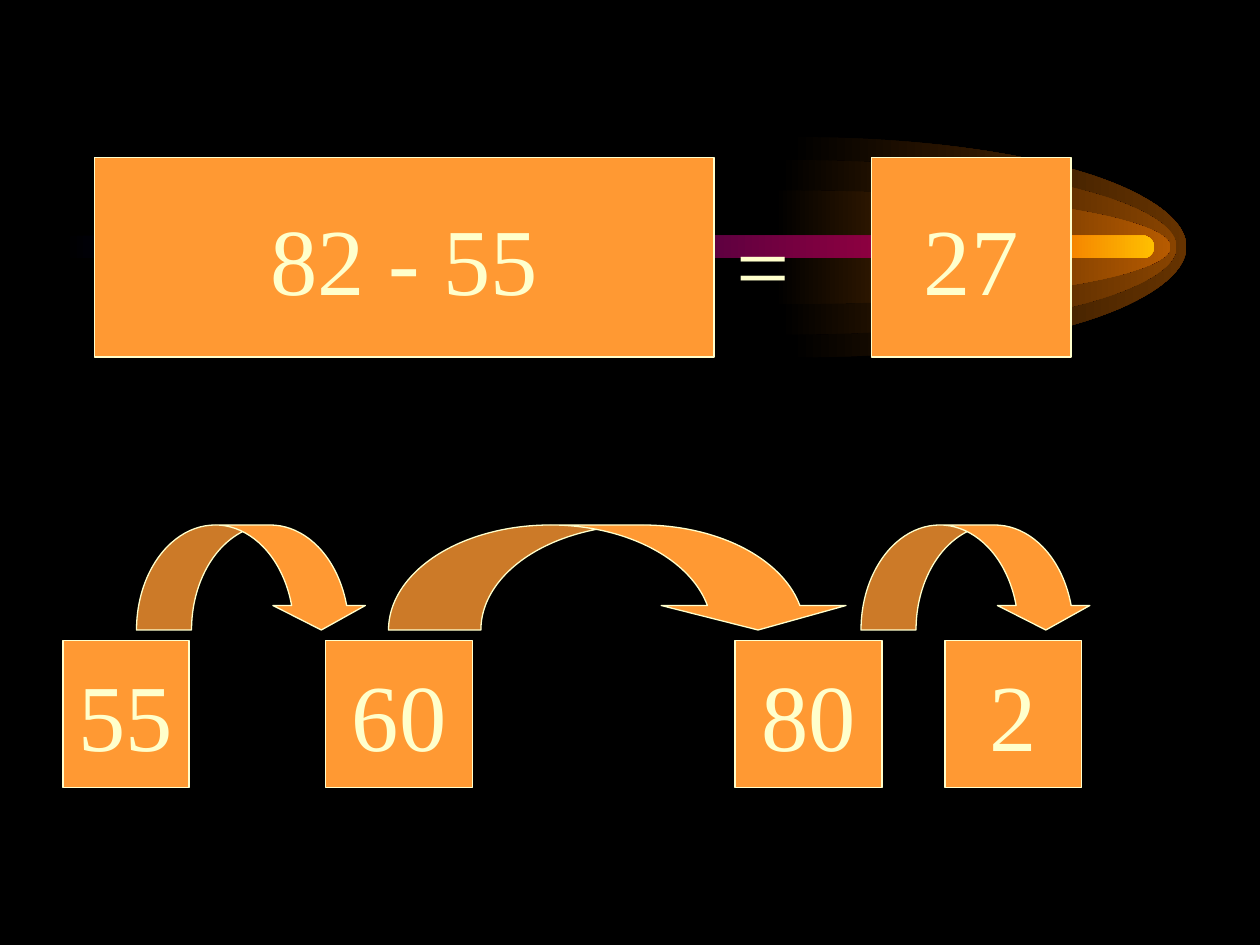
from dataclasses import dataclass

from lxml.etree import SubElement as Sub
from pptx import Presentation
from pptx.dml.color import RGBColor
from pptx.enum.shapes import MSO_SHAPE as Kind
from pptx.enum.text import MSO_ANCHOR as Anchor, MSO_AUTO_SIZE as Auto, PP_ALIGN as Align
from pptx.oxml.ns import qn
from pptx.util import Pt

ORANGE, CREAM, BLACK = "FF9933", "FFFFCC", "000000"
FONT = {"name": "Times New Roman", "size": Pt(54)}
BOX_FRAME = {"word_wrap": False, "vertical_anchor": Anchor.MIDDLE}
SIGN_FRAME = {"word_wrap": True, "auto_size": Auto.SHAPE_TO_FIT_TEXT}
MID = 141.3
SPAN = Pt(226.8)
CURVE = [
    (2.9, -1), (83.5, -1), (158.4, -0.82), (198.7, -0.5), (239, -0.18),
    (238.3, 0.18), (198, 0.5), (157.7, 0.82), (82.8, 1), (2.2, 1), (3.6, 0),
]


@dataclass
class Box:
    text: str
    left: float
    top: float
    width: float
    height: float


@dataclass
class Arrow:
    left: float
    width: float
    shaft: float
    head: float


@dataclass
class Glow:
    left: float
    half: float
    tint: str


BOXES = [
    Box("82 - 55", 54, 90, 354, 114),
    Box("55", 36, 366, 72, 84),
    Box("60", 186, 366, 84, 84),
    Box("80", 420, 366, 84, 84),
    Box("2", 540, 366, 78, 84),
    Box("27", 498, 90, 114, 114),
]
ARROWS = [
    Arrow(222, 264, 0.88, 1.76),
    Arrow(492, 132, 0.524, 0.88),
    Arrow(78, 132, 0.524, 0.88),
]
GLOWS = [
    Glow(449.3, 63, "663300"),
    Glow(443.7, 49.9, "894400"),
    Glow(440.3, 32.5, "B75B00"),
]
BEAM = [
    (0, BLACK), (20, "000040"), (50, "400040"),
    (75, "8F0040"), (90, "F27300"), (100, "FFBF00"),
]


def tone(code: str) -> RGBColor:
    return RGBColor.from_string(code)


def apply(item, values: dict) -> None:
    for key, value in values.items():
        setattr(item, key, value)


def paint(shape) -> None:
    shape.shadow.inherit = False
    shape.fill.solid()
    shape.fill.fore_color.rgb = tone(ORANGE)
    shape.line.color.rgb = tone(CREAM)
    shape.line.width = Pt(0.75)


def fade(shape, stops: list) -> None:
    shape.shadow.inherit = False
    shape.line.fill.background()
    shape.fill.gradient()
    shape.fill.gradient_angle = 0
    ramp = next(shape._element.iter(qn("a:gsLst")))
    for stop in list(ramp):
        ramp.remove(stop)
    for place, code in stops:
        stop = Sub(ramp, qn("a:gs"), pos=str(place * 1000))
        Sub(stop, qn("a:srgbClr"), val=code)


def write(shape, text: str, frame: dict, align: Align):
    apply(shape.text_frame, frame)
    line = shape.text_frame.paragraphs[0]
    line.alignment = align
    run = line.add_run()
    run.text = text
    apply(run.font, FONT)
    run.font.color.rgb = tone(CREAM)
    return line


def bend(shape) -> None:
    trace = next(shape._element.iter(qn("a:path")))
    lines = trace.findall(qn("a:lnTo"))
    for first in range(0, 9, 3):
        curve, *rest = lines[first:first + 3]
        curve.tag = qn("a:cubicBezTo")
        for line in rest:
            curve.append(line[0])
            trace.remove(line)
    trace.set("w", str(SPAN))
    shape.width = SPAN


def add_glow(shapes, glow: Glow) -> None:
    start, *dots = [(Pt(glow.left + x), Pt(MID + glow.half * y)) for x, y in CURVE]
    pen = shapes.build_freeform(*start)
    pen.add_line_segments(dots, close=True)
    shape = pen.convert_to_shape()
    bend(shape)
    fade(shape, [(0, BLACK), (100, glow.tint)])


def add_beam(shapes) -> None:
    beam = shapes.add_shape(
        Kind.ROUNDED_RECTANGLE, Pt(36), Pt(134.6), Pt(623.5), Pt(13)
    )
    beam.adjustments[0] = 0.5
    fade(beam, BEAM)


def add_box(shapes, box: Box) -> None:
    shape = shapes.add_shape(
        Kind.RECTANGLE, Pt(box.left), Pt(box.top), Pt(box.width), Pt(box.height)
    )
    paint(shape)
    write(shape, box.text, BOX_FRAME, Align.CENTER)


def add_arrow(shapes, arrow: Arrow) -> None:
    shape = shapes.add_shape(
        Kind.CURVED_DOWN_ARROW, Pt(arrow.left), Pt(300), Pt(arrow.width), Pt(60)
    )
    for index, value in enumerate((arrow.shaft, arrow.head, 0.233)):
        shape.adjustments[index] = value
    paint(shape)


def add_sign(shapes) -> None:
    sign = shapes.add_textbox(Pt(414), Pt(114), Pt(72), Pt(72))
    line = write(sign, "=", SIGN_FRAME, Align.LEFT)
    gap = Sub(line._p.get_or_add_pPr(), qn("a:spcBef"))
    Sub(gap, qn("a:spcPct"), val="50000")


def main() -> None:
    deck = Presentation()
    apply(deck, {"slide_width": Pt(720), "slide_height": Pt(540)})
    slide = deck.slides.add_slide(deck.slide_layouts[6])
    slide.background.fill.solid()
    slide.background.fill.fore_color.rgb = tone(BLACK)
    shapes = slide.shapes
    comet = shapes.add_group_shape().shapes
    for glow in GLOWS:
        add_glow(comet, glow)
    add_beam(comet)
    for box in BOXES:
        add_box(shapes, box)
    for arrow in ARROWS:
        add_arrow(shapes, arrow)
    add_sign(shapes)
    deck.save("out.pptx")


if __name__ == "__main__":
    main()
